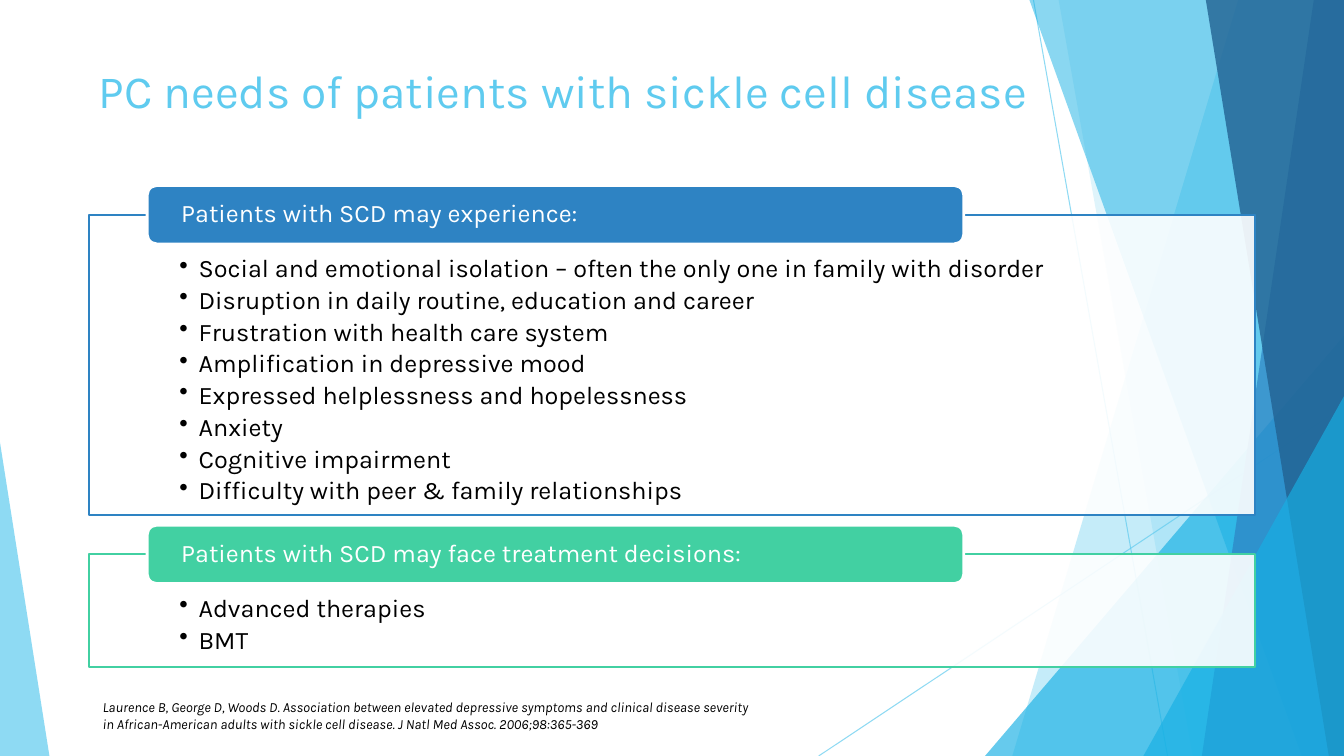
from lxml.etree import SubElement
from pptx import Presentation
from pptx.dml.color import RGBColor
from pptx.enum.shapes import MSO_CONNECTOR, MSO_SHAPE
from pptx.enum.text import MSO_ANCHOR, MSO_AUTO_SIZE, PP_ALIGN
from pptx.oxml.ns import qn
from pptx.util import Inches, Pt

WIDE, HIGH = 13.33, 7.5
FONT = "Karla"
HEX = {"sky": "5FCBEF", "cyan": "17B0E4", "blue": "2E83C3", "navy": "226292",
       "green": "42D0A2", "white": "FFFFFF", "black": "000000"}

TITLE = "PC needs of patients with sickle cell disease"
CARDS = [
    {"head": "Patients with SCD may experience:", "tone": "blue", "top": 2.13, "high": 2.98,
     "items": ["Social and emotional isolation – often the only one in family with disorder",
               "Disruption in daily routine, education and career",
               "Frustration with health care system",
               "Amplification in depressive mood",
               "Expressed helplessness and hopelessness",
               "Anxiety",
               "Cognitive impairment",
               "Difficulty with peer & family relationships"]},
    {"head": "Patients with SCD may face treatment decisions:", "tone": "green",
     "top": 5.5, "high": 1.12, "items": ["Advanced therapies", "BMT"]},
]
SOURCE = ("Laurence B, George D, Woods D. Association between elevated depressive symptoms "
          "and clinical disease severity in African-American adults with sickle cell disease. "
          "J Natl Med Assoc. 2006;98:365-369")

RAYS = [(10.25, 0, 11.58, HIGH), (WIDE, 4.03, 8.12, HIGH)]
# Bands run to the right edge: ("band", top x, bottom x, colour, opacity)
# Wedges stand on the bottom edge: ("wedge", left, width, height, peak, colour, opacity)
DECOR = [
    ("band", 12.28, 10.04, "sky", 36),
    ("band", 10.5, 11.83, "sky", 20),
    ("wedge", 9.77, 3.56, 4.17, 1, "cyan", 66),
    ("band", 10.21, 12.91, "cyan", 50),
    ("band", 13.03, 11.92, "blue", 70),
    ("band", 11.96, 13.18, "navy", 80),
    ("wedge", 11.34, 1.99, 3.57, 1, "cyan", 66),
    ("wedge", 0, 0.49, 3.11, 0, "sky", 70),
]


def color(name):
    return RGBColor.from_string(HEX[name])


def fade(part, share):
    """Set the opacity, in percent, of the first colour inside part."""
    tint = next(part.iter(qn("a:srgbClr")))
    SubElement(tint, qn("a:alpha"), val=str(share * 1000))


def paint(shape, fill, share=100, line=None, width=1.0):
    shape.shadow.inherit = False
    shape.fill.solid()
    shape.fill.fore_color.rgb = color(fill)
    if share < 100:
        fade(shape._element.spPr, share)
    if line:
        shape.line.color.rgb = color(line)
        shape.line.width = Pt(width)
    else:
        shape.line.fill.background()


def write(shape, lines, size, tone, frame=None, para=None, italic=None, bullet=False):
    text = shape.text_frame
    text.text = "\n".join(lines)
    layout = {"word_wrap": True, "auto_size": MSO_AUTO_SIZE.NONE,
              "vertical_anchor": MSO_ANCHOR.TOP, **(frame or {})}
    for key, val in layout.items():
        setattr(text, key, val)
    for row in text.paragraphs:
        for key, val in {"alignment": PP_ALIGN.LEFT, **(para or {})}.items():
            setattr(row, key, val)
        font = row.runs[0].font
        for key, val in {"name": FONT, "size": Pt(size), "italic": italic}.items():
            setattr(font, key, val)
        font.color.rgb = color(tone)
        if bullet:
            props = row._p.get_or_add_pPr()
            props.set("marL", str(Inches(0.19)))
            props.set("indent", str(Inches(-0.19)))
            SubElement(props, qn("a:buChar"), char="•")


def insets(left, top, bottom):
    return {"margin_left": Inches(left), "margin_right": Inches(left),
            "margin_top": Inches(top), "margin_bottom": Inches(bottom)}


def add_ray(shapes, ends):
    ray = shapes.add_connector(MSO_CONNECTOR.STRAIGHT, *map(Inches, ends))
    ray.line.color.rgb = color("sky")
    ray.line.width = Pt(0.75)
    fade(ray._element.spPr, 70)
    SubElement(ray._element.spPr, qn("a:effectLst"))


def add_band(shapes, top, base, tone, share):
    pen = shapes.build_freeform(Inches(top), 0)
    pen.add_line_segments([(Inches(x), Inches(y)) for x, y in
                           [(WIDE, 0), (WIDE, HIGH), (base, HIGH)]], close=True)
    paint(pen.convert_to_shape(), tone, share)


def add_wedge(shapes, left, width, high, peak, tone, share):
    wedge = shapes.add_shape(MSO_SHAPE.ISOSCELES_TRIANGLE, Inches(left),
                             Inches(HIGH - high), Inches(width), Inches(high))
    wedge.adjustments[0] = peak
    paint(wedge, tone, share)


def add_card(shapes, head, tone, top, high, items):
    body = shapes.add_shape(MSO_SHAPE.RECTANGLE, Inches(0.88), Inches(top),
                            Inches(11.57), Inches(high))
    paint(body, "white", 90, tone, 1.5)
    write(body, items, 18, "black", insets(0.9, 0.41, 0.14),
          {"line_spacing": 0.9, "space_after": Pt(3.2)}, bullet=True)
    tab = shapes.add_shape(MSO_SHAPE.ROUNDED_RECTANGLE, Inches(1.46), Inches(top - 0.29),
                           Inches(8.1), Inches(0.58))
    paint(tab, tone, line="white", width=2)
    write(tab, [head], 18, "white",
          {"vertical_anchor": MSO_ANCHOR.MIDDLE, **insets(0.31, 0, 0)}, {"line_spacing": 0.9})


def main():
    deck = Presentation()
    deck.slide_width, deck.slide_height = Inches(WIDE), Inches(HIGH)
    shapes = deck.slides.add_slide(deck.slide_layouts[5]).shapes

    for ends in RAYS:
        add_ray(shapes, ends)
    makers = {"band": add_band, "wedge": add_wedge}
    for kind, *rest in DECOR:
        makers[kind](shapes, *rest)

    title = shapes.title
    spot = {"left": 0.88, "top": 0.57, "width": 9.56, "height": 1.15}
    for key, val in spot.items():
        setattr(title, key, Inches(val))
    write(title, [TITLE], 33, "sky")
    shapes._spTree.append(title._element)  # in front of the decor

    for card in CARDS:
        add_card(shapes, **card)

    note = shapes.add_textbox(Inches(0.92), Inches(6.88), Inches(6.67), Inches(0.44))
    write(note, [SOURCE], 10, "black", italic=True)
    deck.save("out.pptx")


if __name__ == "__main__":
    main()
